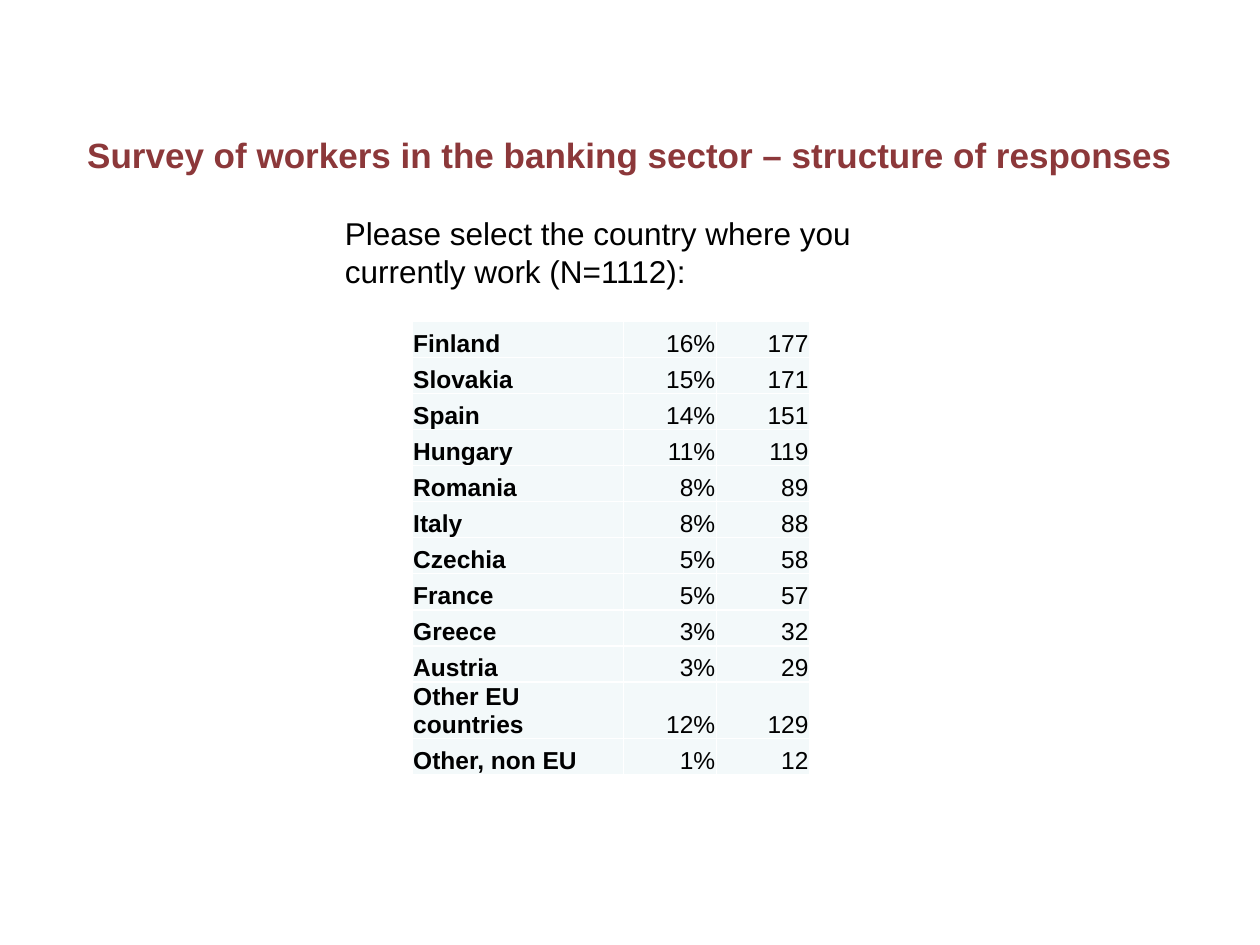
"""Build the slide on the country structure of the banking survey responses."""
from lxml import etree
from pptx import Presentation
from pptx.dml.color import RGBColor
from pptx.enum import text
from pptx.oxml import ns
from pptx.util import Pt

MAROON = RGBColor(0x8C, 0x38, 0x3A)
BLACK = RGBColor(0x00, 0x00, 0x00)
WHITE = RGBColor(0xFF, 0xFF, 0xFF)
PALE = RGBColor(0xF3, 0xF9, 0xFA)

TITLE = "Survey of workers in the banking sector – structure of responses"
QUESTION = "Please select the country where you currently work (N=1112):"
RESPONSES = [
    ("Finland", "16%", "177"),
    ("Slovakia", "15%", "171"),
    ("Spain", "14%", "151"),
    ("Hungary", "11%", "119"),
    ("Romania", "8%", "89"),
    ("Italy", "8%", "88"),
    ("Czechia", "5%", "58"),
    ("France", "5%", "57"),
    ("Greece", "3%", "32"),
    ("Austria", "3%", "29"),
    ("Other EU countries", "12%", "129"),
    ("Other, non EU", "1%", "12"),
]
COLUMN_WIDTHS = (120.8, 53.3, 53.3)
ROW_HEIGHT = 20.63
WRAPPED_ROW_HEIGHT = 32
WRAPPED_COUNTRY = "Other EU countries"


class SurveySlide:
    """Hold the text style and the slide being filled."""

    def __init__(self, slide, font_name="Arial"):
        self.slide = slide
        self.font_name = font_name

    def style(self, paragraph, size, color=BLACK, bold=False, align=text.PP_ALIGN.LEFT):
        paragraph.alignment = align
        font = paragraph.font
        font.name, font.size, font.bold = self.font_name, Pt(size), bold
        font.color.rgb = color

    def title(self, wording, left, top, width, height):
        heading = self.slide.shapes.title
        heading.left, heading.top = Pt(left), Pt(top)
        heading.width, heading.height = Pt(width), Pt(height)
        frame = heading.text_frame
        frame.text = wording
        frame.vertical_anchor = text.MSO_ANCHOR.MIDDLE
        frame.margin_bottom = Pt(26.6)
        self.style(frame.paragraphs[0], 20, MAROON, True, text.PP_ALIGN.CENTER)

    def question(self, wording, left, top, width, height):
        frame = self.slide.shapes.add_textbox(
            Pt(left), Pt(top), Pt(width), Pt(height)).text_frame
        frame.word_wrap = True
        frame.auto_size = text.MSO_AUTO_SIZE.SHAPE_TO_FIT_TEXT
        frame.text = wording
        self.style(frame.paragraphs[0], 18)

    def responses(self, rows, left, top):
        heights = [WRAPPED_ROW_HEIGHT if row[0] == WRAPPED_COUNTRY else ROW_HEIGHT
                   for row in rows]
        table = self.slide.shapes.add_table(
            len(rows), len(COLUMN_WIDTHS), Pt(left), Pt(top),
            Pt(sum(COLUMN_WIDTHS)), Pt(sum(heights))).table
        table.first_row = table.horz_banding = False
        for column, width in zip(table.columns, COLUMN_WIDTHS):
            column.width = Pt(width)
        for table_row, height, values in zip(table.rows, heights, rows):
            table_row.height = Pt(height)
            for index, (cell, value) in enumerate(zip(table_row.cells, values)):
                self.cell(cell, value, is_country=index == 0)

    def cell(self, cell, value, is_country):
        cell.text = value
        cell.vertical_anchor = text.MSO_ANCHOR.BOTTOM
        cell.margin_left = cell.margin_top = cell.margin_right = Pt(0.75)
        cell.margin_bottom = Pt(0)
        align = text.PP_ALIGN.LEFT if is_country else text.PP_ALIGN.RIGHT
        self.style(cell.text_frame.paragraphs[0], 14, bold=is_country, align=align)
        self.borders(cell)
        cell.fill.solid()
        cell.fill.fore_color.rgb = PALE

    def borders(self, cell):
        properties = cell._tc.get_or_add_tcPr()
        for side in ("a:lnL", "a:lnR", "a:lnT", "a:lnB"):
            line = etree.SubElement(properties, ns.qn(side), w=str(Pt(1)))
            fill = etree.SubElement(line, ns.qn("a:solidFill"))
            etree.SubElement(fill, ns.qn("a:srgbClr"), val=str(WHITE))


def main():
    deck = Presentation()
    deck.slide_width, deck.slide_height = Pt(720), Pt(540)
    survey = SurveySlide(deck.slides.add_slide(deck.slide_layouts[5]))
    survey.title(TITLE, 36, 54.7, 648, 90)
    survey.responses(RESPONSES, 235.4, 183.6)
    survey.question(QUESTION, 190, 119, 360, 51)
    deck.save("out.pptx")


if __name__ == "__main__":
    main()
